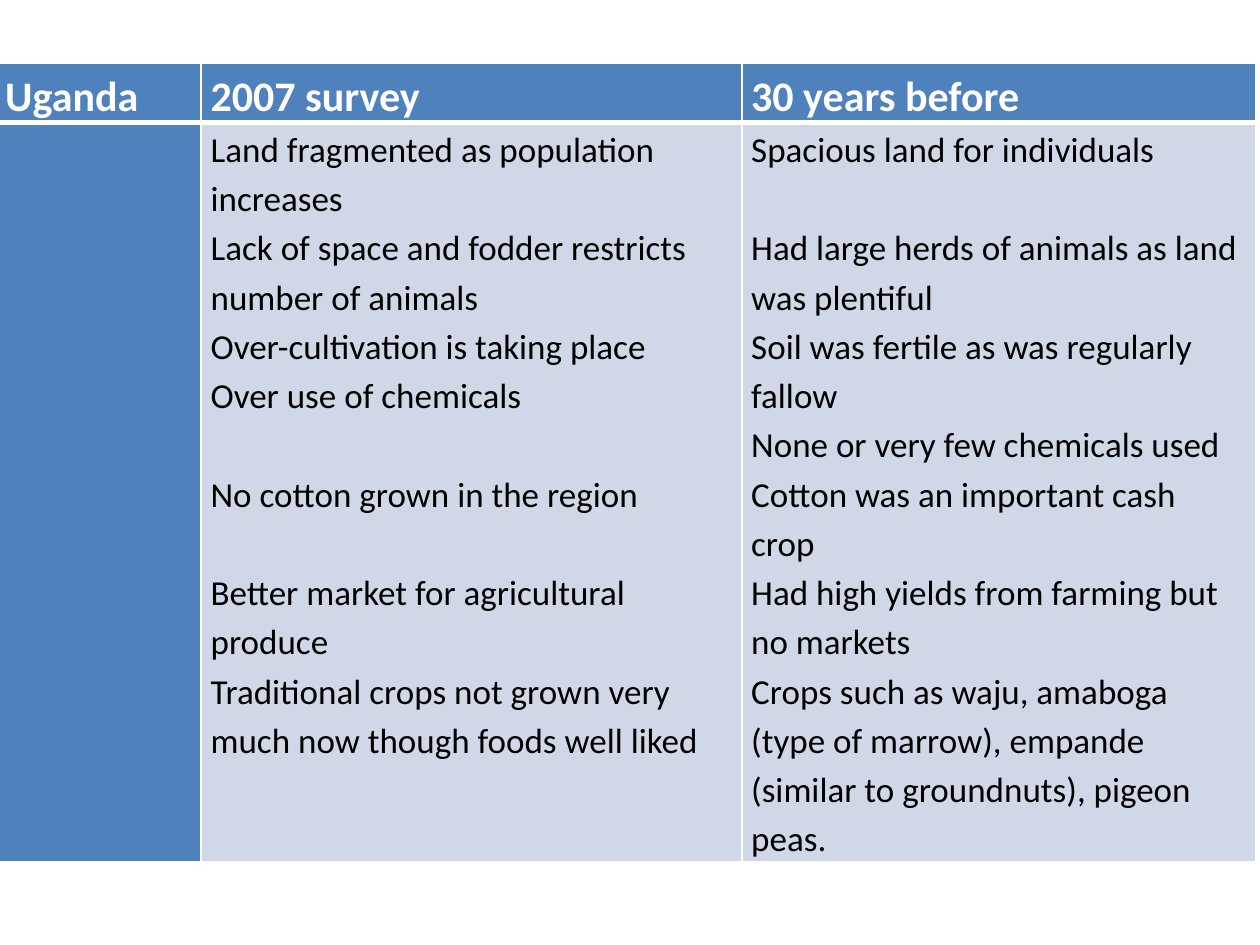
from lxml import etree
from pptx import Presentation
from pptx import util as u
from pptx.dml.color import RGBColor
from pptx.oxml import ns

WHITE = RGBColor(0xFF, 0xFF, 0xFF)
BLACK = RGBColor(0x00, 0x00, 0x00)
BLUE = RGBColor(0x4F, 0x81, 0xBD)
PALE = RGBColor(0xD0, 0xD8, 0xE8)

FONT = "Calibri"
COLUMN_WIDTHS = (117.4, 308.9, 293.7)
ROW_HEIGHTS = (33, 421.5)
LINE_GAP = 28.1  # one body line, keeps matching points level

HEADINGS = ("Uganda", "2007 survey", "30 years before")
# Each point is its wording and the space above it.
SURVEY = (
    ("Land fragmented as population increases", 0),
    ("Lack of space and fodder restricts number of animals", 0),
    ("Over-cultivation is taking place", 0),
    ("Over use of chemicals", 0),
    ("No cotton grown in the region", LINE_GAP),
    ("Better market for agricultural produce", LINE_GAP),
    ("Traditional crops not grown very much now though foods well liked", 0),
)
BEFORE = (
    ("Spacious land for individuals", 0),
    ("Had large herds of animals as land was plentiful", LINE_GAP),
    ("Soil was fertile as was regularly fallow", 0),
    ("None or very few chemicals used", 0),
    ("Cotton was an important cash crop", 0),
    ("Had high yields from farming but no markets", 0),
    ("Crops such as waju, amaboga (type of marrow), empande "
     "(similar to groundnuts), pigeon peas.", 0),
)


def add_borders(cell, top, bottom):
    """Draw white borders; call before filling, as lines precede the fill."""
    properties = cell._tc.get_or_add_tcPr()
    for side, width in (("L", 1), ("R", 1), ("T", top), ("B", bottom)):
        line = etree.SubElement(properties, ns.qn(f"a:ln{side}"), w=str(u.Pt(width)))
        fill = etree.SubElement(line, ns.qn("a:solidFill"))
        etree.SubElement(fill, ns.qn("a:srgbClr"), val=str(WHITE))


def fill_cell(cell, points, size, color, bold):
    cell.margin_left = cell.margin_right = u.Pt(5.4)
    cell.margin_top = cell.margin_bottom = 0
    frame = cell.text_frame
    frame.text = "\n".join(wording for wording, _ in points)
    for para, (_, gap) in zip(frame.paragraphs, points):
        para.line_spacing = 1.15
        para.space_before = u.Pt(gap)
        para.font.size = u.Pt(size)
        for span in para.runs:
            span.font.name = FONT
            span.font.size = u.Pt(size)
            span.font.bold = bold
            span.font.color.rgb = color


def add_comparison(page, left, top):
    box = page.shapes.add_table(
        len(ROW_HEIGHTS), len(COLUMN_WIDTHS), u.Pt(left), u.Pt(top),
        u.Pt(sum(COLUMN_WIDTHS)), u.Pt(sum(ROW_HEIGHTS)))
    table = box.table
    for column, width in zip(table.columns, COLUMN_WIDTHS):
        column.width = u.Pt(width)
    for row, height in zip(table.rows, ROW_HEIGHTS):
        row.height = u.Pt(height)

    for index, (heading, points) in enumerate(zip(HEADINGS, ((), SURVEY, BEFORE))):
        header, body = table.cell(0, index), table.cell(1, index)
        add_borders(header, 1, 3)
        add_borders(body, 3, 1)
        fill_cell(header, ((heading, 0),), 24, WHITE, True)
        fill_cell(body, points, 20, BLACK, False)
        for cell, color in ((header, BLUE), (body, PALE if points else BLUE)):
            cell.fill.solid()
            cell.fill.fore_color.rgb = color


def main():
    deck = Presentation()
    deck.slide_width, deck.slide_height = u.Pt(720), u.Pt(540)
    page = deck.slides.add_slide(deck.slide_layouts[6])
    add_comparison(page, -2.4, 36.4)
    deck.save("out.pptx")


if __name__ == "__main__":
    main()
